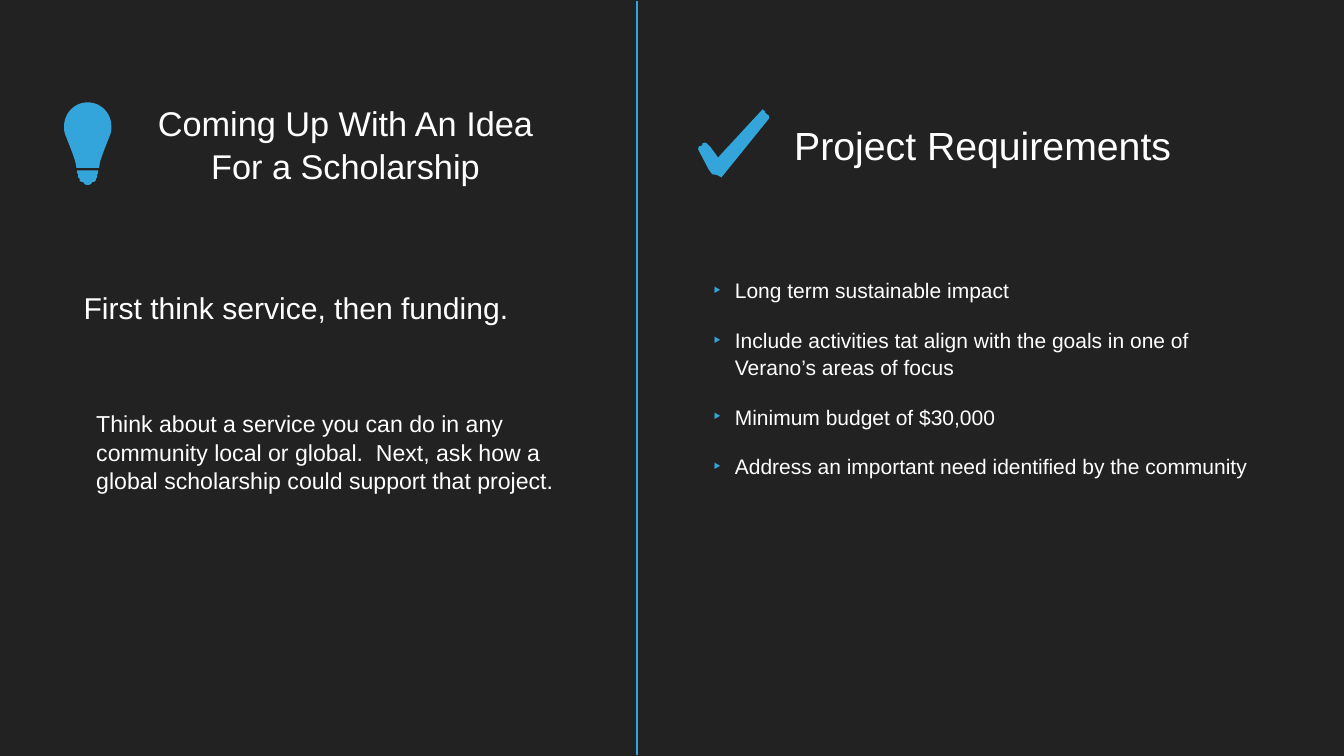
from dataclasses import dataclass

from lxml.etree import SubElement
from pptx import Presentation
from pptx.dml.color import RGBColor
from pptx.enum.shapes import MSO_CONNECTOR as Connector
from pptx.enum.text import MSO_ANCHOR as Anchor, MSO_AUTO_SIZE as AutoSize, PP_ALIGN as Align
from pptx.oxml.ns import qn
from pptx.util import Pt


@dataclass(frozen=True)
class Theme:
    background: str = "222222"
    accent: str = "34A5DA"
    text: str = "FFFFFF"
    font: str = "Arial"
    idea_title: int = 49
    requirements_title: int = 56
    lead: int = 43
    body: int = 33
    bullet: int = 30
    space_before: int = 34
    line_spacing: float = 1.04
    inset: float = 4.3
    bullet_indent: int = 31


class SlideBuilder:
    def __init__(self, slide, theme):
        self.slide = slide
        self.theme = theme
        fill = slide.background.fill
        fill.solid()
        fill.fore_color.rgb = RGBColor.from_string(theme.background)

    def text(self, box, lines, size, align=Align.LEFT, bulleted=False):
        theme = self.theme
        frame = self.slide.shapes.add_textbox(*map(Pt, box)).text_frame
        frame.word_wrap = True
        frame.auto_size = AutoSize.SHAPE_TO_FIT_TEXT
        frame.vertical_anchor = Anchor.MIDDLE
        frame.margin_left = frame.margin_right = Pt(theme.inset)
        frame.margin_top = frame.margin_bottom = Pt(theme.inset)
        for index, line in enumerate(lines):
            paragraph = frame.add_paragraph() if index else frame.paragraphs[0]
            paragraph.alignment = align
            paragraph.line_spacing = theme.line_spacing
            paragraph.space_before = Pt(theme.space_before)
            if bulleted:
                self.bullet(paragraph)
            run = paragraph.add_run()
            run.text = line
            run.font.name = theme.font
            run.font.size = Pt(size)
            run.font.color.rgb = RGBColor.from_string(theme.text)

    def bullet(self, paragraph):
        properties = paragraph._p.get_or_add_pPr()
        indent = Pt(self.theme.bullet_indent)
        properties.set("marL", str(indent))
        properties.set("indent", str(-indent))
        color = SubElement(properties, qn("a:buClr"))
        SubElement(color, qn("a:srgbClr"), val=self.theme.accent)
        SubElement(properties, qn("a:buSzPct"), val="105000")
        SubElement(properties, qn("a:buFont"), typeface=self.theme.font)
        SubElement(properties, qn("a:buChar"), char="‣")

    def line(self, start, end, width):
        connector = self.slide.shapes.add_connector(
            Connector.STRAIGHT, *map(Pt, start + end))
        connector.line.color.rgb = RGBColor.from_string(self.theme.accent)
        connector.line.width = Pt(width)
        SubElement(connector._element.spPr, qn("a:effectLst"))

    def outline(self, *contours):
        first, *others = [[(Pt(x), Pt(y)) for x, y in contour] for contour in contours]
        builder = self.slide.shapes.build_freeform(*first[0], scale=1.0)
        builder.add_line_segments(first[1:], close=True)
        for contour in others:
            builder.move_to(*contour[0])
            builder.add_line_segments(contour[1:], close=True)
        shape = builder.convert_to_shape()
        shape.shadow.inherit = False
        shape.fill.solid()
        shape.fill.fore_color.rgb = RGBColor.from_string(self.theme.accent)
        shape.line.fill.background()


def curve(start, control_1, control_2, end, steps=12):
    points = []
    for step in range(steps + 1):
        t = step / steps
        weights = ((1 - t) ** 3, 3 * t * (1 - t) ** 2, 3 * t * t * (1 - t), t ** 3)
        corners = (start, control_1, control_2, end)
        points.append(tuple(
            sum(weight * corner[axis] for weight, corner in zip(weights, corners))
            for axis in (0, 1)))
    return points


def mirrored(half, center):
    return ([(center + x, y) for x, y in half]
            + [(center - x, y) for x, y in reversed(half)])


BULB_CENTER = 125.3
BULB_GLASS = (
    curve((0, 146.2), (18.7, 146.2), (33.8, 161.3), (33.8, 180.7))
    + curve((33.8, 180.7), (33.8, 184.3), (33.8, 187.9), (32.5, 191))
    + curve((32.5, 191), (31, 196), (17.3, 228), (17, 234.7))
    + [(16.5, 238.3), (15.8, 239.8)]
)
BULB_BASE = [
    (15, 243.4), (15, 247), (13.6, 249.2), (13.6, 253.4), (12.2, 254.9),
    (11.5, 254.9), (11.5, 257.8), (9.4, 259.9),
] + curve((6.5, 259.9), (5.5, 262.8), (3, 264.2), (0, 264.2))
CHECK_MARK = [
    (1089.4, 156.2), (1027.4, 223.2), (1026, 225.4), (1024.6, 223.2),
    (1014.5, 209.5), (1009.4, 204.5), (1006.6, 203.8), (1003, 205.2),
    (1003.7, 207.4), (997.9, 209.5), (997.9, 211), (997.2, 213.1),
    (1012.3, 241.9), (1017.4, 249), (1023.8, 249.8), (1030.7, 253.4),
    (1044, 236.9), (1095.8, 172.8), (1098.7, 169.2), (1098, 164.2),
    (1095.8, 163.4), (1093, 160.6), (1093, 159.1),
]
REQUIREMENTS = [
    "Long term sustainable impact",
    "Include activities tat align with the goals in one of Verano’s areas of focus",
    "Minimum budget of $30,000",
    "Address an important need identified by the community",
]


def main():
    presentation = Presentation()
    presentation.slide_width = Pt(1920)
    presentation.slide_height = Pt(1080)
    slide = presentation.slides.add_slide(presentation.slide_layouts[6])
    theme = Theme()
    builder = SlideBuilder(slide, theme)

    builder.outline(mirrored(BULB_GLASS, BULB_CENTER), mirrored(BULB_BASE, BULB_CENTER))
    builder.text((181.5, 134, 624, 142), ["Coming Up With An Idea For a Scholarship"],
                 theme.idea_title, Align.CENTER)
    builder.text((115.2, 404.6, 726, 67), ["First think service, then funding."], theme.lead)
    builder.text((133.2, 550.8, 690, 188),
                 ["Think about a service you can do in any community local or global.  "
                  "Next, ask how a global scholarship could support that project."],
                 theme.body)

    builder.line((910, 1078.5), (910, 1.5), 2)

    builder.text((979.2, 163.4, 849.6, 84.2), ["Project Requirements"],
                 theme.requirements_title, Align.CENTER)
    builder.outline(CHECK_MARK)
    builder.text((1014.5, 362.2, 779, 355.7), REQUIREMENTS, theme.bullet, bulleted=True)

    presentation.save("out.pptx")


if __name__ == "__main__":
    main()
